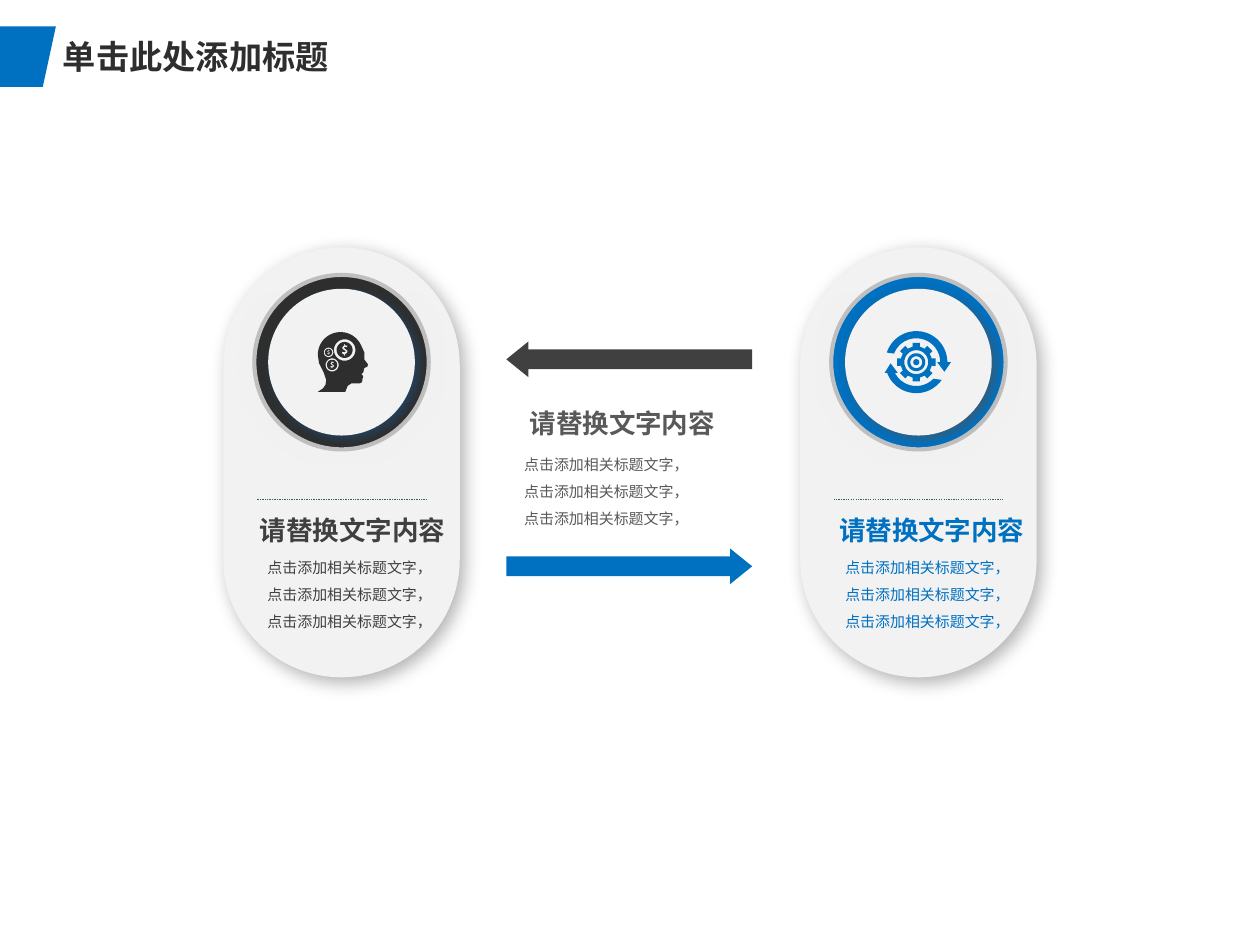
from math import cos, radians, sin

from lxml.etree import SubElement
from pptx import Presentation
from pptx.dml.color import RGBColor
from pptx.enum.dml import MSO_LINE
from pptx.enum.shapes import MSO_CONNECTOR, MSO_SHAPE
from pptx.oxml.ns import qn
from pptx.util import Cm, Pt

DARK, BLUE, PALE, GREY = "2E2E2E", "0070C0", "F2F2F2", "BFBFBF"
HEADING = "请替换文字内容"
BODY = ["点击添加相关标题文字，"] * 3
TITLE = "单击此处添加标题"

BANNER = [(0, 0.56), (1.19, 0.56), (0.91, 1.85), (0, 1.85)]
PANEL_TOP, PANEL_WIDTH, PANEL_HEIGHT, DIAL_Y = 5.26, 5.03, 9.14, 7.7
PANELS = [
    {"left": 4.75, "ring": DARK, "shadow": "1F4E79", "rule": 0.5},
    {"left": 17.02, "ring": BLUE, "shadow": "525252", "rule": 0.75},
]
ARROWS = [(MSO_SHAPE.LEFT_ARROW, 7.26, "404040"), (MSO_SHAPE.RIGHT_ARROW, 11.66, BLUE)]
HEADINGS = [(5.28, 10.8, "404040"), (17.6, 10.8, BLUE), (11.02, 8.53, "595959")]
BODIES = [(5.44, 11.56, "404040"), (17.73, 11.56, BLUE), (10.9, 9.37, "595959")]

HEAD_ORIGIN, GEAR_CENTRE = (6.76, 7.06), (19.49, 7.7)
ICON_UNIT = 1.27 / 50
FACE = [(39, 17), (39, 23), (42, 27), (41.5, 29), (39, 30), (38, 34), (36.5, 35),
        (38, 37), (37.5, 39), (37, 42), (35, 43), (28, 43), (25, 45), (23, 50),
        (0, 50), (4.5, 47), (6.5, 44), (7, 40), (5, 34), (1, 26)]
COINS = [(9, 17, 3, 4), (22.5, 15, 6.7, 9), (12, 27.5, 4.3, 5.5)]
DOLLAR = [(0.5, 3.6), (0.5, 5), (-0.5, 5), (-0.5, 4), (-2.5, 3), (-2.1, 1.5), (0, 2),
          (1, 1.3), (0, 0.4), (-2, -1), (-2, -2.6), (-0.5, -4), (-0.5, -5), (0.5, -5),
          (0.5, -4), (2.5, -3.7), (2.1, -2.2), (0.5, -2.6), (-0.5, -2), (0.5, -1),
          (2.5, 0.5), (2.3, 2.6)]


def colour(value):
    return RGBColor.from_string(value)


def paint(shape, fill):
    shape.shadow.inherit = False
    shape.fill.solid()
    shape.fill.fore_color.rgb = colour(fill)
    shape.line.fill.background()
    return shape


def effects(shape):
    shape.shadow.inherit = False
    return shape._element.spPr.find(qn("a:effectLst"))


def add_shadow(shape, value, opacity, blur, distance):
    shadow = SubElement(effects(shape), qn("a:outerShdw"), blurRad=str(Pt(blur)),
                        dist=str(Pt(distance)), dir="2700000", algn="tl", rotWithShape="0")
    tint = SubElement(shadow, qn("a:srgbClr"), val=value)
    SubElement(tint, qn("a:alpha"), val=str(opacity * 1000))


def add_circle(x, y, size, fill):
    circle = page.shapes.add_shape(MSO_SHAPE.OVAL, Cm(x - size / 2), Cm(y - size / 2),
                                   Cm(size), Cm(size))
    return paint(circle, fill)


def add_outline(contours, fill, origin=(0, 0), unit=1):
    placed = [[(Cm(origin[0] + x * unit), Cm(origin[1] + y * unit)) for x, y in contour]
              for contour in contours]
    builder = page.shapes.build_freeform(*placed[0][0], scale=1.0)
    for index, contour in enumerate(placed):
        if index:
            builder.move_to(*contour[0])
        builder.add_line_segments(contour[1:], close=True)
    return paint(builder.convert_to_shape(), fill)


def arc(x, y, radius, start, end, steps=24):
    angles = [radians(start + (end - start) * step / steps) for step in range(steps + 1)]
    return [(x + radius * cos(angle), y + radius * sin(angle)) for angle in angles]


def ring(x, y, radius):
    return arc(x, y, radius, 0, 360, 36)[:-1]


def add_text(left, top, width, height, lines, size, font, value, bold=False, spacing=None):
    box = page.shapes.add_textbox(Cm(left), Cm(top), Cm(width), Cm(height))
    frame = box.text_frame
    frame.word_wrap = False
    frame.text = "\n".join(lines)
    for para in frame.paragraphs:
        para.line_spacing = spacing
        para.font.size = Pt(size)
        para.font.bold = bold
        para.font.color.rgb = colour(value)
        para.font.name = font
        SubElement(para._p.pPr.find(qn("a:defRPr")), qn("a:ea"), typeface="Calibri")


def add_panel(left, ring, shadow, rule):
    panel = page.shapes.add_shape(MSO_SHAPE.ROUNDED_RECTANGLE, Cm(left), Cm(PANEL_TOP),
                                  Cm(PANEL_WIDTH), Cm(PANEL_HEIGHT))
    panel.adjustments[0] = 0.5
    add_shadow(paint(panel, PALE), "000000", 29, 11, 4)

    centre = left + PANEL_WIDTH / 2
    glow = add_circle(centre, DIAL_Y, 5.13, PALE)
    glow.fill.gradient()
    glow.fill.gradient_angle = 270
    for stop, value in zip(glow.fill.gradient_stops, ("FFFFFF", GREY)):
        stop.color.rgb = colour(value)
    SubElement(effects(glow), qn("a:softEdge"), rad=str(Pt(31.75)))

    dial = add_circle(centre, DIAL_Y, 3.71, ring)
    dial.line.color.rgb = colour(GREY)
    dial.line.width = Pt(2.5)
    add_shadow(add_circle(centre, DIAL_Y, 3.12, PALE), shadow, 64, 6, 3)

    divider = page.shapes.add_connector(MSO_CONNECTOR.STRAIGHT, Cm(left + 0.71), Cm(10.62),
                                        Cm(left + 4.32), Cm(10.62))
    divider.line.color.rgb = colour("3C5E67")
    divider.line.width = Pt(rule)
    divider.line.dash_style = MSO_LINE.ROUND_DOT
    SubElement(divider._element.spPr, qn("a:effectLst"))


def add_head_icon():
    skull = arc(19, 19, 19, 180, 340) + FACE
    holes = [ring(x, y, hole) for x, y, radius, hole in COINS]
    add_outline([skull] + holes, DARK, HEAD_ORIGIN, ICON_UNIT)
    for x, y, radius, hole in COINS:
        sign = [(x + dx * radius / 7, y + dy * radius / 7) for dx, dy in DOLLAR]
        add_outline([ring(x, y, radius), sign], DARK, HEAD_ORIGIN, ICON_UNIT)


def add_gear_icon():
    upper = arc(0, 0, 26, 198, 360) + [(29, 0), (23.5, 8), (17.5, 0)] + arc(0, 0, 20, 360, 201)
    lower = arc(0, 0, 26, 35, 160) + [(-26.5, 9), (-21.5, 1), (-15.5, 9)] + arc(0, 0, 20, 153, 44)
    teeth = []
    for angle in range(0, 360, 45):
        for offset, radius in ((-13, 13.3), (-11, 16.4), (11, 16.4), (13, 13.3)):
            turn = radians(angle + offset)
            teeth.append((radius * cos(turn), radius * sin(turn)))
    parts = [[upper], [lower], [teeth, ring(0, 0, 10)], [ring(0, 0, 7.5), ring(0, 0, 5)]]
    for contours in parts:
        add_outline(contours, BLUE, GEAR_CENTRE, ICON_UNIT)
    add_circle(*GEAR_CENTRE, 0.13, BLUE)


deck = Presentation()
deck.slide_width, deck.slide_height = Cm(26.8), Cm(20.09)
page = deck.slides.add_slide(deck.slide_layouts[6])

add_outline([BANNER], BLUE)
for panel in PANELS:
    add_panel(**panel)
for kind, top, fill in ARROWS:
    arrow = paint(page.shapes.add_shape(kind, Cm(10.77), Cm(top), Cm(5.23), Cm(0.76)), fill)
    arrow.adjustments[0], arrow.adjustments[1] = 0.55, 0.62
for left, top, value in BODIES:
    add_text(left, top, 4, 1.98, BODY, 9, "Arial", value, spacing=1.5)
for left, top, value in HEADINGS:
    add_text(left, top, 4.75, 0.94, [HEADING], 16, "Calibri", value, bold=True)
add_gear_icon()
add_head_icon()
add_text(1.09, 0.64, 23.55, 1.12, [TITLE], 20, "Arial", DARK, bold=True)

deck.save("out.pptx")
